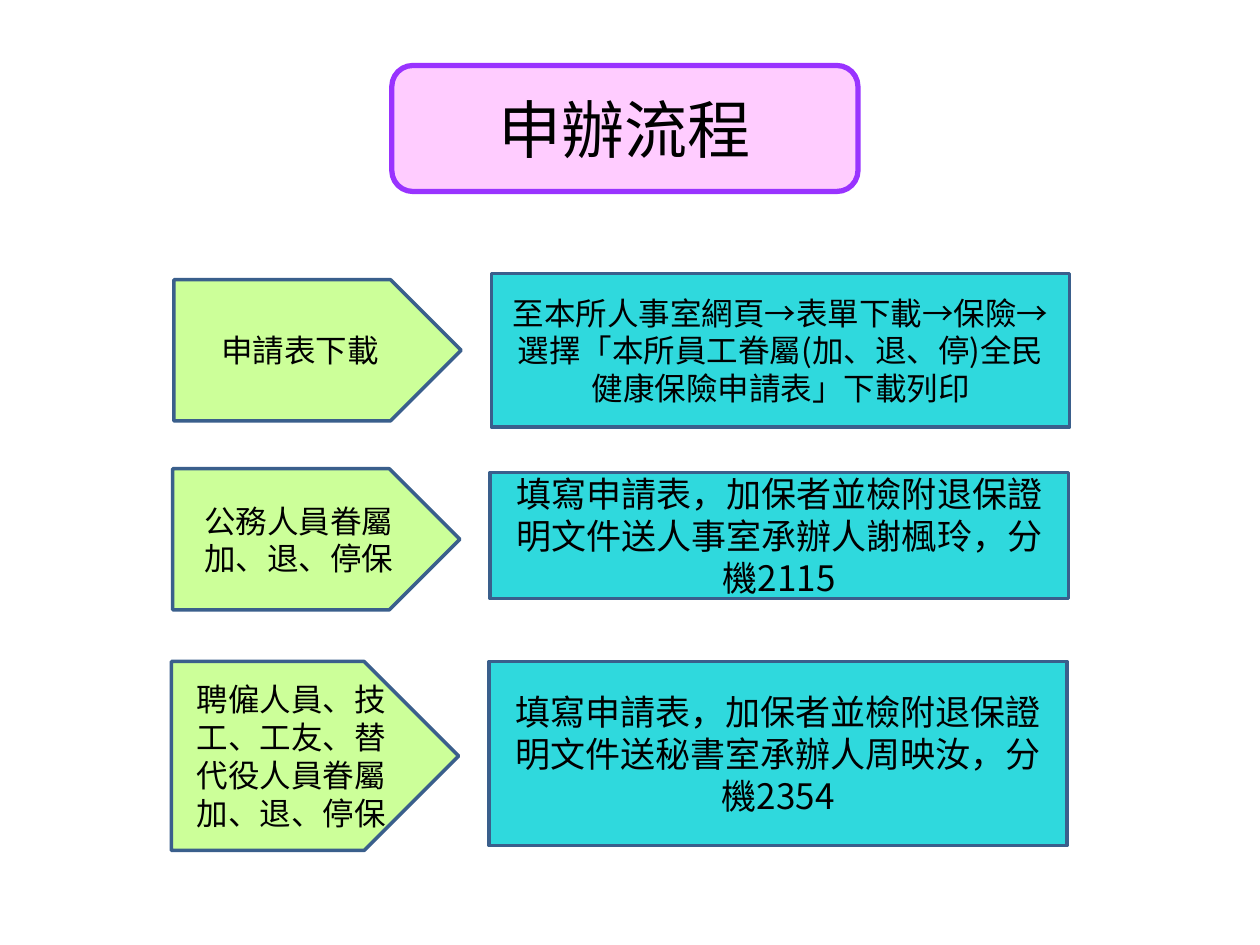
from dataclasses import dataclass

from lxml.etree import SubElement
from pptx import Presentation
from pptx.dml.color import RGBColor as Color
from pptx.enum.shapes import MSO_SHAPE as Shape
from pptx.enum.text import MSO_ANCHOR as Anchor, PP_ALIGN as Align
from pptx.oxml.ns import qn
from pptx.util import Inches, Pt


@dataclass(frozen=True)
class Theme:
    font: str = "Noto Sans CJK SC"
    ink: str = "000000"
    title_fill: str = "FFCCFF"
    title_line: str = "9933FF"
    step_fill: str = "CCFF99"
    detail_fill: str = "2FD9DD"
    outline: str = "3A5F8C"
    title_size: int = 36
    large: int = 20
    body: int = 18


COLUMNS, ROWS = 100, 75
STEP_WIDTH, DETAIL_WIDTH = 22.8, 45.9
DETAIL_OFFSET = 25.2

STEPS = [
    dict(left=13.8, label="申請表下載", label_rows=(22.2, 11.2),
         detail="至本所人事室網頁→表單下載→保險→選擇「本所員工眷屬(加、退、停)全民健康保險申請表」下載列印",
         detail_rows=(21.7, 12.2), size=Theme.body),
    dict(left=13.7, label="公務人員眷屬\n加、退、停保", label_rows=(37.2, 11.2),
         detail="填寫申請表，加保者並檢附退保證明文件送人事室承辦人謝楓玲，分機2115",
         detail_rows=(37.5, 10), size=Theme.large),
    dict(left=13.6, label="聘僱人員、技工、工友、替代役人員眷屬加、退、停保", label_rows=(52.5, 15),
         detail="填寫申請表，加保者並檢附退保證明文件送秘書室承辦人周映汝，分機2354",
         detail_rows=(52.5, 14.6), size=Theme.large),
]


def write(frame, text, *, size, color, font):
    frame.word_wrap = True
    frame.vertical_anchor = Anchor.MIDDLE
    for index, line in enumerate(text.split("\n")):
        para = frame.paragraphs[0] if index == 0 else frame.add_paragraph()
        para.alignment = Align.CENTER
        span = para.add_run()
        span.text = line
        span.font.size = Pt(size)
        span.font.name = font
        span.font.color.rgb = Color.from_string(color)
        SubElement(span.font._element, qn("a:ea"), typeface=font)


class Painter:
    def __init__(self, deck, theme):
        self.theme = theme
        self.column = deck.slide_width / COLUMNS
        self.row = deck.slide_height / ROWS
        self.page = deck.slides.add_slide(deck.slide_layouts[6])

    def panel(self, kind, left, top, width, height, text, *, fill, line, weight, size):
        box = self.page.shapes.add_shape(
            kind, round(left * self.column), round(top * self.row),
            round(width * self.column), round(height * self.row))
        box.shadow.inherit = False
        box.fill.solid()
        box.fill.fore_color.rgb = Color.from_string(fill)
        box.line.color.rgb = Color.from_string(line)
        box.line.width = Pt(weight)
        write(box.text_frame, text, size=size, color=self.theme.ink, font=self.theme.font)

    def title(self, text):
        self.panel(Shape.ROUNDED_RECTANGLE, 31.1, 5.2, 37, 10, text,
                   fill=self.theme.title_fill, line=self.theme.title_line,
                   weight=3, size=self.theme.title_size)

    def arrow(self, left, rows, text):
        self.panel(Shape.PENTAGON, left, rows[0], STEP_WIDTH, rows[1], text,
                   fill=self.theme.step_fill, line=self.theme.outline,
                   weight=2, size=self.theme.body)

    def detail(self, left, rows, text, size):
        self.panel(Shape.RECTANGLE, left, rows[0], DETAIL_WIDTH, rows[1], text,
                   fill=self.theme.detail_fill, line=self.theme.outline,
                   weight=2, size=size)

    def step(self, left, label, label_rows, detail, detail_rows, size):
        self.arrow(left, label_rows, label)
        self.detail(left + DETAIL_OFFSET, detail_rows, detail, size)


def main():
    deck = Presentation()
    deck.slide_width, deck.slide_height = Inches(10), Inches(7.5)
    painter = Painter(deck, Theme())
    painter.title("申辦流程")
    for step in STEPS:
        painter.step(**step)
    deck.save("out.pptx")


if __name__ == "__main__":
    main()
